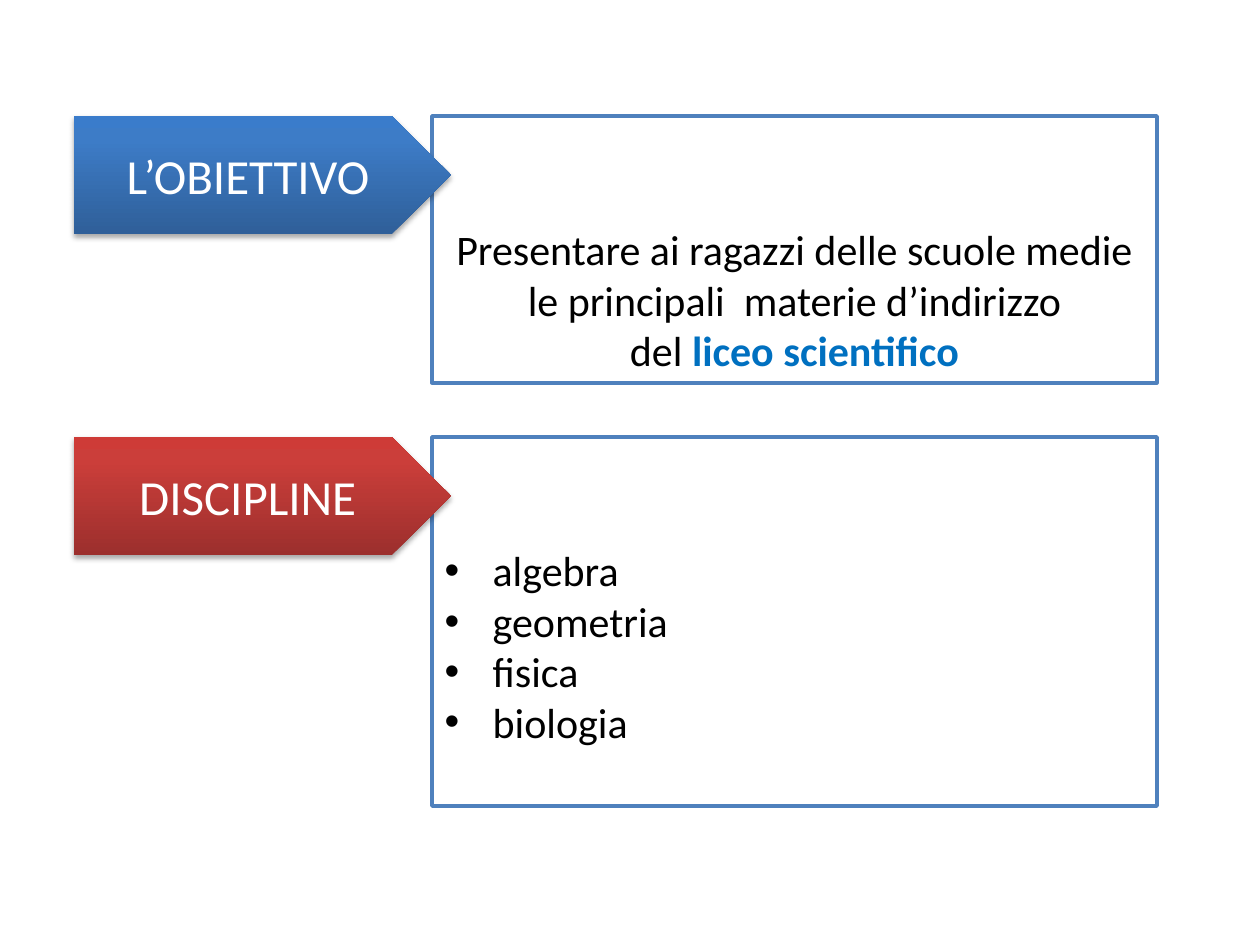
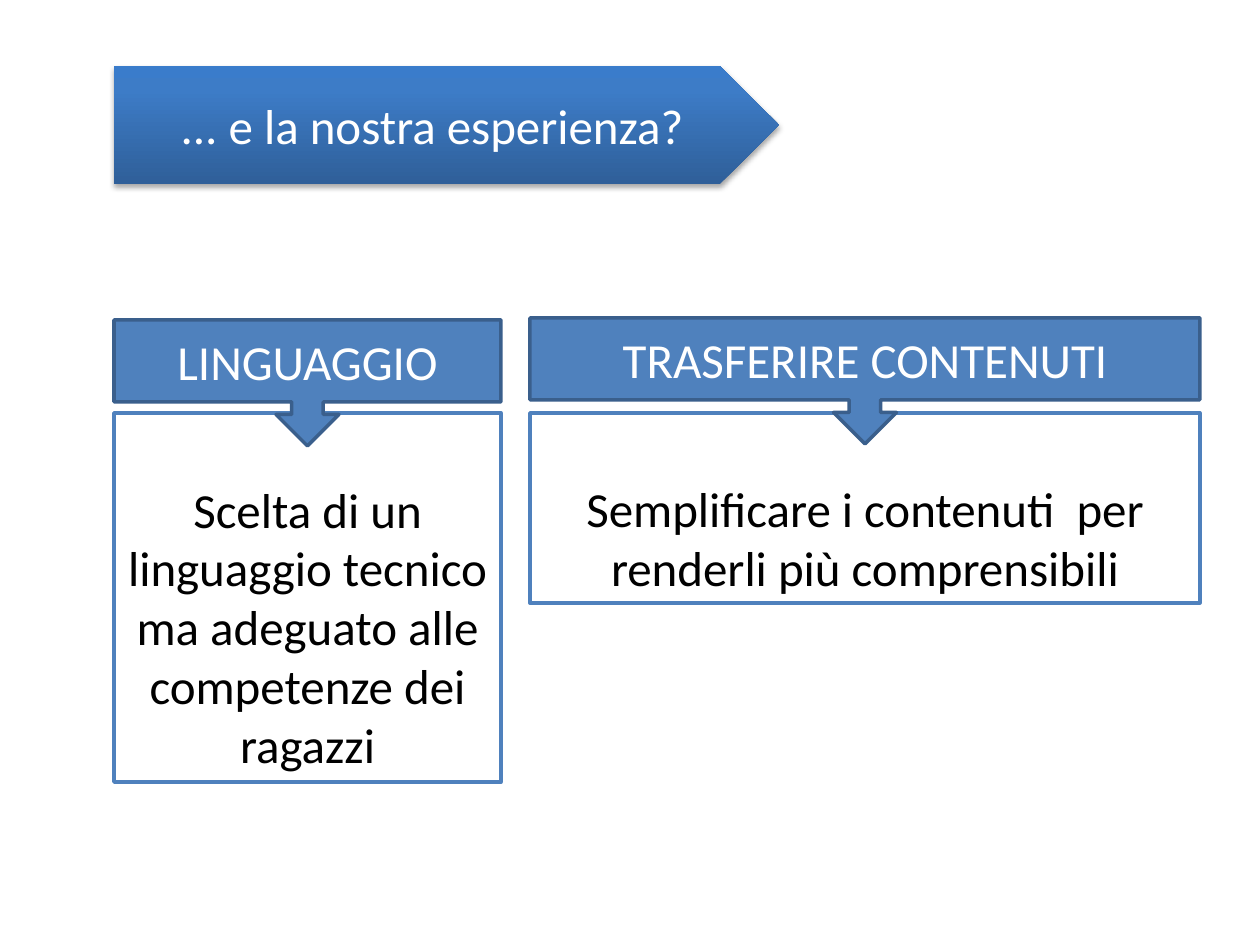
from lxml import etree
from pptx import Presentation
from pptx.dml.color import RGBColor
from pptx.enum.shapes import MSO_SHAPE
from pptx.enum.text import MSO_ANCHOR, MSO_AUTO_SIZE, PP_ALIGN
from pptx.oxml.ns import qn
from pptx.util import Pt

PX = 914400 / 126
PENTAGON, CALLOUT, RECTANGLE = (
    MSO_SHAPE.PENTAGON, MSO_SHAPE.DOWN_ARROW_CALLOUT, MSO_SHAPE.RECTANGLE)
TOP, MIDDLE = MSO_ANCHOR.TOP, MSO_ANCHOR.MIDDLE
LEFT, CENTER = PP_ALIGN.LEFT, PP_ALIGN.CENTER
TITLE_AND_CONTENT, TITLE_ONLY = 1, 5

WHITE = RGBColor(0xFF, 0xFF, 0xFF)
BLACK = RGBColor(0x00, 0x00, 0x00)
ACCENT = RGBColor(0x4F, 0x81, 0xBD)
ACCENT_DARK = RGBColor(0x3A, 0x5F, 0x8C)
HIGHLIGHT = RGBColor(0x00, 0x70, 0xC0)
BLUE_STOPS = (RGBColor(0x2F, 0x5F, 0x99), RGBColor(0x3D, 0x7C, 0xC7),
              RGBColor(0x3A, 0x7C, 0xCB))
RED_STOPS = (RGBColor(0x9C, 0x2F, 0x2D), RGBColor(0xCB, 0x3E, 0x3A),
             RGBColor(0xCE, 0x3B, 0x37))

HEADING = {"size": Pt(28), "name": "Calibri", "color": WHITE}
BODY_LARGE = {**HEADING, "color": BLACK}
BODY = {**BODY_LARGE, "size": Pt(24)}
KEYWORD = {**BODY, "color": HIGHLIGHT, "bold": True}


def emu(px):
    return round(px * PX)


def place(shape, box):
    for side, px in zip(("left", "top", "width", "height"), box):
        setattr(shape, side, emu(px))


def add_shape(slide, kind, box):
    shape = slide.shapes.add_shape(kind, *map(emu, box))
    shape.shadow.inherit = False
    return shape


def paint(shape, fill, line):
    shape.fill.solid()
    shape.fill.fore_color.rgb = fill
    shape.line.color.rgb = line
    shape.line.width = Pt(2)


def write(shape, paragraphs, anchor=MIDDLE, align=CENTER, top=6):
    """Each paragraph is a list of (text, format) spans."""
    frame = shape.text_frame
    settings = {"word_wrap": True, "auto_size": MSO_AUTO_SIZE.NONE,
                "vertical_anchor": anchor, "margin_top": emu(top)}
    for name, value in settings.items():
        setattr(frame, name, value)
    for index, spans in enumerate(paragraphs):
        para = frame.add_paragraph() if index else frame.paragraphs[0]
        para.alignment = align
        para.space_before = Pt(0)
        for text, text_format in spans:
            span = para.add_run()
            span.text = text
            for name, value in text_format.items():
                if name == "color":
                    span.font.color.rgb = value
                else:
                    setattr(span.font, name, value)


def add_bullets(shape, indent):
    for para in shape.text_frame.paragraphs:
        properties = para._p.get_or_add_pPr()
        properties.set("marL", str(emu(indent)))
        properties.set("indent", str(-emu(indent)))
        etree.SubElement(properties, qn("a:buFont")).set("typeface", "Arial")
        etree.SubElement(properties, qn("a:buChar")).set("char", "•")


def add_gradient(shape, colors):
    """Run the colours from the bottom edge to the top."""
    shape.fill.gradient()
    shape.fill.gradient_angle = 90
    stops = shape.fill._xPr.find(qn("a:gradFill")).find(qn("a:gsLst"))
    for stop in list(stops):
        stops.remove(stop)
    for position, color in zip((0, 80000, 100000), colors):
        stop = etree.SubElement(stops, qn("a:gs"), pos=str(position))
        etree.SubElement(stop, qn("a:srgbClr"), val=str(color))


def add_shadow(shape):
    effects = shape._element.spPr.find(qn("a:effectLst"))
    shadow = etree.SubElement(effects, qn("a:outerShdw"), blurRad="40000",
                              dist="23000", dir="5400000", rotWithShape="0")
    color = etree.SubElement(shadow, qn("a:srgbClr"), val="000000")
    etree.SubElement(color, qn("a:alpha"), val="35000")


def add_banner(slide, box, text, colors, is_title=False):
    left, top, width, height = box
    banner = add_shape(slide, PENTAGON, box)
    add_gradient(banner, colors)
    banner.line.fill.background()
    add_shadow(banner)
    holder = banner
    if is_title:
        # The title lies above the arrow, clear of half of its point
        holder = slide.shapes.title
        place(holder, (left, top, width - height // 4, height))
        slide.shapes._spTree.append(holder._element)
    write(holder, [[(text, HEADING)]])


def add_panel(slide, box, paragraphs, top):
    panel = add_shape(slide, RECTANGLE, box)
    paint(panel, WHITE, ACCENT)
    write(panel, paragraphs, anchor=TOP, top=top)


def add_list_panel(slide, box, items, top):
    panel = slide.placeholders[1]
    place(panel, box)
    paint(panel, WHITE, ACCENT)
    write(panel, [[(item, BODY)] for item in items], TOP, LEFT, top)
    add_bullets(panel, 48)


def add_topic(slide, box, heading, text, callout_top):
    """A panel with a callout pointing down into it."""
    left, top, width, height = box
    add_panel(slide, box, [[(text, BODY_LARGE)]], 66)
    callout = add_shape(slide, CALLOUT, (left, callout_top, width, 126))
    paint(callout, ACCENT, ACCENT_DARK)
    write(callout, [[(heading, HEADING)]])


def build_goal_slide(deck):
    slide = deck.slides.add_slide(deck.slide_layouts[TITLE_AND_CONTENT])
    panel_left, panel_width, text_top = 432, 725, 108
    goal_top, subjects_top = 116, 437
    goal = [[("Presentare ai ragazzi delle scuole medie", BODY)],
            [("le principali  materie d’indirizzo", BODY)],
            [("del ", BODY), ("liceo scientifico", KEYWORD)]]
    add_panel(slide, (panel_left, goal_top, panel_width, 267), goal, text_top)
    add_list_panel(slide, (panel_left, subjects_top, panel_width, 369),
                   ["algebra", "geometria", "fisica", "biologia"], text_top)
    add_banner(slide, (74, goal_top, 377, 118), "L’OBIETTIVO", BLUE_STOPS, True)
    add_banner(slide, (74, subjects_top, 377, 118), "DISCIPLINE", RED_STOPS)


def build_experience_slide(deck):
    slide = deck.slides.add_slide(deck.slide_layouts[TITLE_ONLY])
    add_banner(slide, (114, 66, 665, 118), "... e la nostra esperienza?",
               BLUE_STOPS, True)
    add_topic(slide, (114, 413, 387, 369), "LINGUAGGIO",
              "Scelta di un linguaggio tecnico ma adeguato alle competenze"
              " dei ragazzi", 320)
    add_topic(slide, (530, 413, 670, 190), "TRASFERIRE CONTENUTI",
              "Semplificare i contenuti  per renderli più comprensibili", 318)


def main():
    deck = Presentation()
    deck.slide_width, deck.slide_height = emu(1260), emu(945)
    build_goal_slide(deck)
    build_experience_slide(deck)
    deck.save("out.pptx")


if __name__ == "__main__":
    main()
